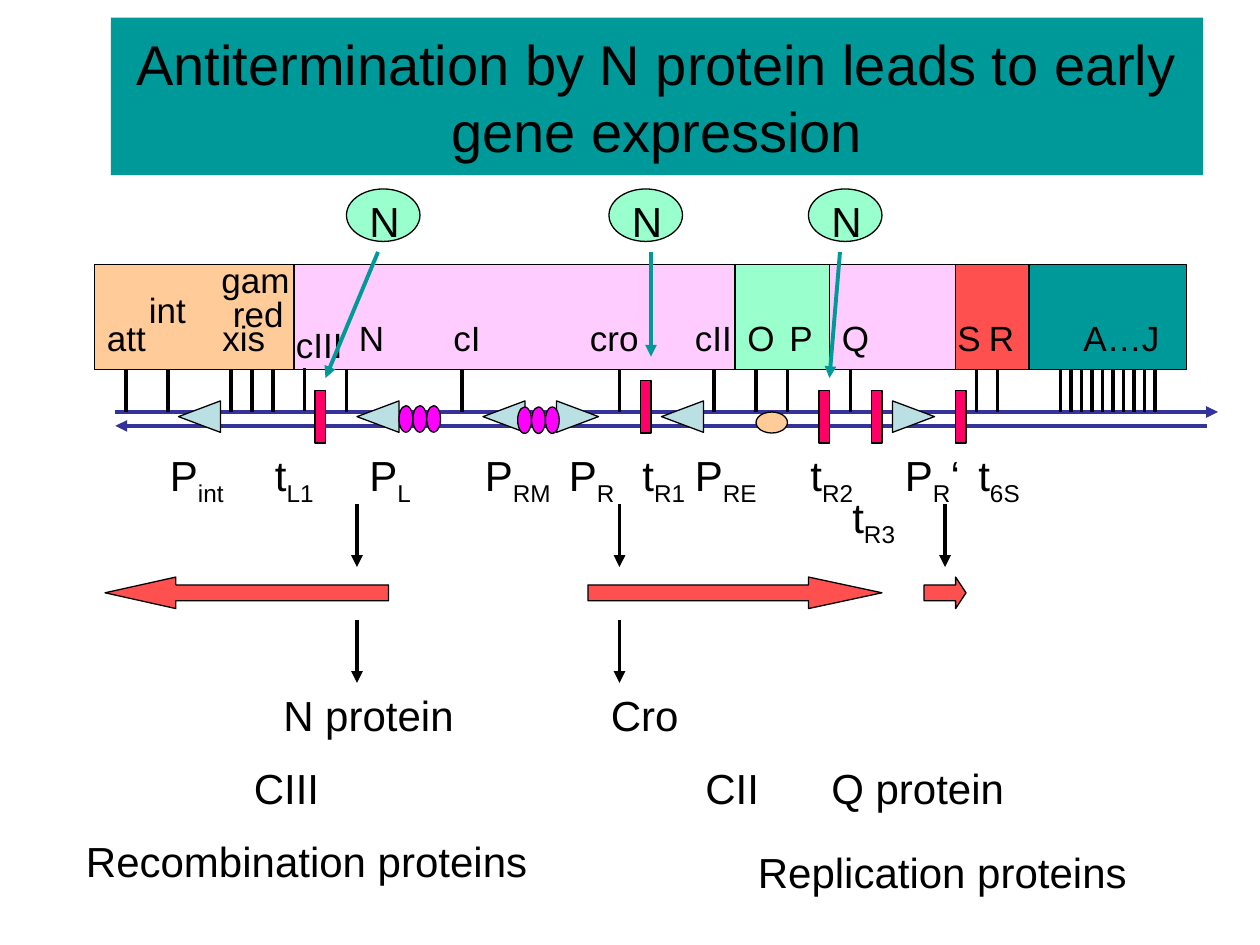
from dataclasses import dataclass

from lxml import etree
from pptx import Presentation
from pptx.dml.color import RGBColor
from pptx.enum.shapes import MSO_CONNECTOR, MSO_SHAPE
from pptx.enum.text import MSO_ANCHOR, MSO_AUTO_SIZE, PP_ALIGN
from pptx.oxml.ns import qn
from pptx.util import Inches, Pt

RECTANGLE = MSO_SHAPE.RECTANGLE
OVAL = MSO_SHAPE.OVAL
TRIANGLE = MSO_SHAPE.ISOSCELES_TRIANGLE
LEFT_ARROW = MSO_SHAPE.LEFT_ARROW
RIGHT_ARROW = MSO_SHAPE.RIGHT_ARROW
STRAIGHT = MSO_CONNECTOR.STRAIGHT
MIDDLE = MSO_ANCHOR.MIDDLE
CENTER = PP_ALIGN.CENTER
FIT_TEXT = MSO_AUTO_SIZE.SHAPE_TO_FIT_TEXT

CELL = 1 / 12


@dataclass(frozen=True)
class Theme:
    font: str = "Arial"
    title_size: int = 32
    label_size: int = 24
    gene_size: int = 20
    outline: float = 0.75
    stroke: float = 2.25
    black: str = "000000"
    teal: str = "009999"
    mint: str = "99FFCC"
    pink: str = "FFCCFF"
    red: str = "FF5050"
    peach: str = "FFCC99"
    navy: str = "333399"
    pale_blue: str = "BBE0E3"
    crimson: str = "FF0066"
    magenta: str = "FF00FF"


@dataclass(frozen=True)
class Box:
    left: float
    top: float
    width: float
    height: float

    def column(self, number):
        return self.left + number * CELL


THEME = Theme()


def color(value):
    return RGBColor.from_string(value)


def style_span(span, size):
    span.font.name = THEME.font
    span.font.size = Pt(size)
    span.font.color.rgb = color(THEME.black)


def add_block(shapes, kind, left, top, width, height, fill, outlined=True):
    block = shapes.add_shape(kind, Inches(left), Inches(top), Inches(width), Inches(height))
    block.shadow.inherit = False
    block.fill.solid()
    block.fill.fore_color.rgb = color(fill)
    if outlined:
        block.line.color.rgb = color(THEME.black)
        block.line.width = Pt(THEME.outline)
    else:
        block.line.fill.background()
    return block


def add_line(shapes, start, end, stroke, arrow=False):
    line = shapes.add_connector(STRAIGHT, *(Inches(value) for value in (*start, *end)))
    line.line.color.rgb = color(stroke)
    line.line.width = Pt(THEME.stroke)
    properties = line._element.spPr
    if arrow:
        etree.SubElement(properties.find(qn("a:ln")), qn("a:tailEnd"), type="triangle")
    etree.SubElement(properties, qn("a:effectLst"))


def add_label(shapes, left, top, width, size, stem, subscript="", suffix=""):
    height = 0.5 if size == THEME.label_size else 0.43
    label = shapes.add_textbox(Inches(left), Inches(top), Inches(width), Inches(height))
    frame = label.text_frame
    frame.word_wrap = False
    frame.auto_size = FIT_TEXT
    para = frame.paragraphs[0]
    for text in filter(None, (stem, subscript, suffix)):
        para.add_run().text = text
    for span in para.runs:
        style_span(span, size)
    if subscript:
        para.runs[1]._r.get_or_add_rPr().set("baseline", "-25000")


def draw_title(page, box):
    banner = add_block(page.shapes, RECTANGLE, box.left, box.top, box.width, box.height,
                       THEME.teal, outlined=False)
    frame = banner.text_frame
    frame.word_wrap = True
    frame.vertical_anchor = MIDDLE
    frame.text = "Antitermination by N protein leads to early gene expression"
    para = frame.paragraphs[0]
    para.alignment = CENTER
    style_span(para.runs[0], THEME.title_size)


def draw_genes(page, box):
    regions = [(19, THEME.peach), (42, THEME.pink), (9, THEME.mint),
               (12, THEME.pink), (7, THEME.red), (15, THEME.teal)]
    column = 0
    for cells, fill in regions:
        add_block(page.shapes, RECTANGLE, box.column(column), box.top,
                  cells * CELL, box.height, fill)
        column += cells
    genes = [("att", 0, 0.36, 0.52), ("int", 4, 0.14, 0.52), ("xis", 11, 0.36, 0.55),
             ("red", 12, 0.17, 0.61), ("gam", 10.9, -0.1, 0.75), ("cIII", 18, 0.42, 0.59),
             ("N", 24, 0.36, 0.41), ("cI", 33, 0.36, 0.43), ("cro", 46, 0.36, 0.6),
             ("cII", 56, 0.36, 0.52), ("O", 61, 0.36, 0.43), ("P", 65, 0.36, 0.4),
             ("Q", 70, 0.36, 0.43), ("S", 81, 0.36, 0.4), ("R", 84, 0.36, 0.41),
             ("A…J", 93, 0.36, 0.82)]
    for name, column, drop, width in genes:
        add_label(page.shapes, box.column(column), box.top + drop, width, THEME.gene_size, name)


def draw_strands(page, box):
    strands = page.shapes.add_group_shape().shapes
    for first, last, drop in [(2, 107, 0.34), (106, 2, 0.45)]:
        add_line(strands, (box.column(first), box.top + drop),
                 (box.column(last), box.top + drop), THEME.navy, arrow=True)
    for center, rotation in [(46, 90), (78, 90), (27, 270), (39, 270), (10, 270), (56, 270)]:
        promoter = add_block(page.shapes, TRIANGLE, box.column(center - 1.5), box.top + 0.21,
                             3 * CELL, 4 * CELL, THEME.pale_blue)
        promoter.rotation = rotation
    for column, drop in [(52, 0.09), (21, 0.17), (69, 0.17), (74, 0.17), (82, 0.17)]:
        add_block(page.shapes, RECTANGLE, box.column(column), box.top + drop,
                  CELL, 5 * CELL, THEME.crimson)
    for column, drop in [(29, 0.29), (40.3, 0.3)]:
        operators = page.shapes.add_group_shape().shapes
        for index in range(3):
            add_block(operators, OVAL, box.column(column) + index * 0.11, box.top + drop,
                      0.11, 0.21, THEME.magenta)
    add_block(page.shapes, OVAL, box.column(63), box.top + 0.34,
              3 * CELL, 2 * CELL, THEME.peach)
    ticks = [3, 7, 13, 15, 17, 20, 24, 35, 50, 59, 63, 66, 72, 84, 86, *range(92, 102)]
    for column in ticks:
        rise = 0.01 if column == 20 else 0
        add_line(page.shapes, (box.column(column), box.top + 0.34 - rise),
                 (box.column(column), box.top - rise), THEME.black)


def draw_site_labels(page, box):
    sites = [(6, 0, 0.75, "P", "int"), (16, 0, 0.63, "t", "L1"), (25, 0, 0.64, "P", "L"),
             (36, 0, 0.86, "P", "RM"), (44, 0, 0.68, "P", "R"), (51, 0, 0.67, "t", "R1"),
             (56, 0, 0.82, "P", "RE"), (67, 0, 0.67, "t", "R2"), (71, 0.33, 0.67, "t", "R3"),
             (76, 0, 0.66, "P", "R", "‘"), (83, 0, 0.66, "t", "6S")]
    for column, drop, width, *parts in sites:
        add_label(page.shapes, box.column(column), box.top + drop, width,
                  THEME.label_size, *parts)


def draw_antiterminators(page, box):
    for column, start, end, reach in [(24, 27, 22, 1.5), (49, 53, 53, 1.33), (68, 71, 70, 1.5)]:
        protein = page.shapes.add_group_shape().shapes
        add_block(protein, OVAL, box.column(column), box.top, 7 * CELL, 5 * CELL, THEME.mint)
        add_label(protein, box.column(column + 1), box.top, 0.44, THEME.label_size, "N")
        add_line(page.shapes, (box.column(start), box.top + 0.5),
                 (box.column(end), box.top + reach), THEME.teal, arrow=True)


def draw_transcripts(page, box):
    transcripts = [(LEFT_ARROW, 1, 27, 2.25), (RIGHT_ARROW, 47, 28, 2.33),
                   (RIGHT_ARROW, 79, 4, 0.33)]
    for kind, column, cells, head in transcripts:
        transcript = add_block(page.shapes, kind, box.column(column), box.top + 0.58,
                               cells * CELL, 3 * CELL, THEME.red)
        transcript.adjustments[0] = 0.5
        transcript.adjustments[1] = head
    for column, drop in [(50, 0), (25, 0), (81, 0), (50, 0.92), (25, 0.92)]:
        add_line(page.shapes, (box.column(column), box.top + drop),
                 (box.column(column), box.top + drop + 0.5), THEME.black, arrow=True)


def draw_products(page, box):
    products = [("N protein", 16.8, 0, 1.56), ("Cro", 48, 0, 0.74), ("CIII", 14, 0.58, 0.72),
                ("Recombination proteins", -2, 1.16, 3.71), ("CII", 57, 0.58, 0.63),
                ("Replication proteins", 62, 1.25, 3.13), ("Q protein", 69, 0.58, 1.57)]
    for name, column, drop, width in products:
        add_label(page.shapes, box.column(column), box.top + drop, width,
                  THEME.label_size, name)


def main():
    deck = Presentation()
    deck.slide_width, deck.slide_height = Inches(10), Inches(7.5)
    page = deck.slides.add_slide(deck.slide_layouts[6])
    left, width = 0.75, 104 * CELL
    draw_title(page, Box(0.88, 0.14, width, 1.25))
    draw_genes(page, Box(left, 2.1, width, 10 * CELL))
    draw_strands(page, Box(left, 2.93, width, 0.59))
    draw_site_labels(page, Box(left, 3.52, width, 0.83))
    draw_antiterminators(page, Box(left, 1.5, width, 1.5))
    draw_transcripts(page, Box(left, 4, width, 1.42))
    draw_products(page, Box(left, 5.42, width, 1.75))
    deck.save("out.pptx")


if __name__ == "__main__":
    main()
